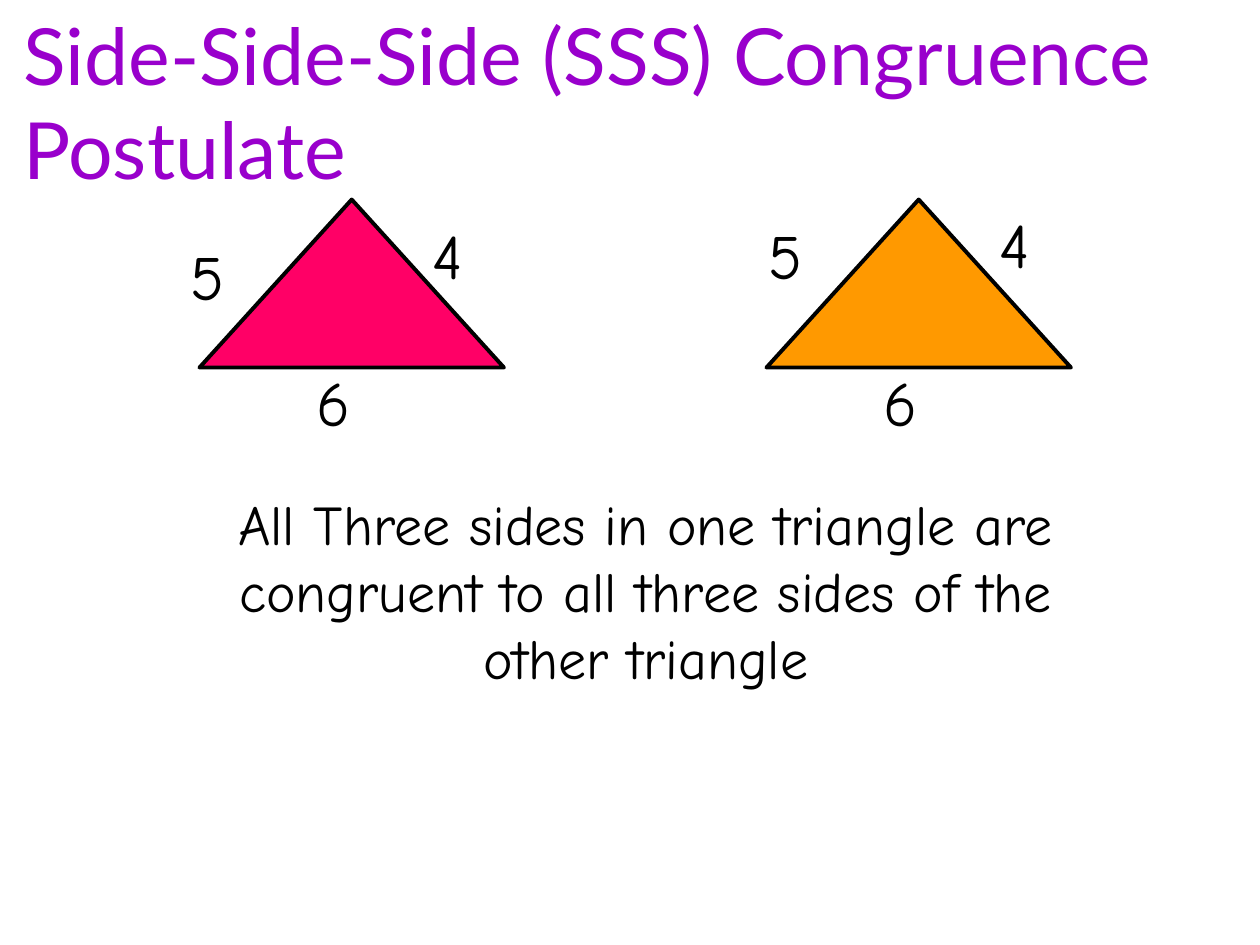
from dataclasses import dataclass

import pptx
import pptx.dml.color
import pptx.enum.shapes
import pptx.enum.text
import pptx.util

Pt = pptx.util.Pt
ALIGN = pptx.enum.text.PP_ALIGN
COLORS = {"title": "9900CC", "pink": "FF0066", "orange": "FF9900", "ink": "000000"}
TITLE_FONT = {"name": "Lato", "size": Pt(45)}
LABEL_FONT = {"name": "Comic Neue", "size": Pt(36)}
STATEMENT_FONT = {"name": "Comic Neue", "size": Pt(32)}
FRAME = {
    "word_wrap": True,
    "auto_size": pptx.enum.text.MSO_AUTO_SIZE.SHAPE_TO_FIT_TEXT,
    "vertical_anchor": pptx.enum.text.MSO_ANCHOR.TOP,
}


@dataclass
class Box:
    left: float
    top: float
    width: float
    height: float

    def lengths(self) -> list:
        return [Pt(v) for v in (self.left, self.top, self.width, self.height)]


@dataclass
class SideLabel:
    text: str
    left: float
    top: float


@dataclass
class Triangle:
    left: float
    color: str
    labels: list[SideLabel]


TRIANGLE_TOP, TRIANGLE_WIDTH, TRIANGLE_HEIGHT = 114, 174, 96
LABEL_WIDTH, LABEL_HEIGHT = 48, 50.4
TRIANGLES = [
    Triangle(114, "pink", [
        SideLabel("5", 102, 132), SideLabel("4", 240, 120), SideLabel("6", 174, 204)]),
    Triangle(438, "orange", [
        SideLabel("5", 432, 120), SideLabel("4", 564, 114), SideLabel("6", 498, 204)]),
]


def rgb(name: str) -> pptx.dml.color.RGBColor:
    return pptx.dml.color.RGBColor.from_string(COLORS[name])


def set_all(target, values: dict) -> None:
    for name, value in values.items():
        setattr(target, name, value)


def write(sp, text: str, font: dict, color: str, align=ALIGN.LEFT) -> None:
    tf = sp.text_frame
    set_all(tf, FRAME)
    p = tf.paragraphs[0]
    p.alignment = align
    r = p.add_run()
    r.text = text
    set_all(r.font, font)
    r.font.color.rgb = rgb(color)


def draw_title(s, text: str, box: Box) -> None:
    sp = s.shapes.title
    sp.left, sp.top, sp.width, sp.height = box.lengths()
    write(sp, text, TITLE_FONT, "title")


def draw_text(s, text: str, box: Box, font: dict, align=ALIGN.LEFT) -> None:
    sp = s.shapes.add_textbox(*box.lengths())
    write(sp, text, font, "ink", align)


def draw_triangle(s, triangle: Triangle) -> None:
    box = Box(triangle.left, TRIANGLE_TOP, TRIANGLE_WIDTH, TRIANGLE_HEIGHT)
    sp = s.shapes.add_shape(
        pptx.enum.shapes.MSO_SHAPE.ISOSCELES_TRIANGLE, *box.lengths())
    sp.shadow.inherit = False
    sp.fill.solid()
    sp.fill.fore_color.rgb = rgb(triangle.color)
    sp.line.color.rgb = rgb("ink")
    sp.line.width = Pt(2.25)
    for label in triangle.labels:
        draw_text(s, label.text,
                  Box(label.left, label.top, LABEL_WIDTH, LABEL_HEIGHT), LABEL_FONT)


def main() -> None:
    prs = pptx.Presentation()
    prs.slide_width, prs.slide_height = Pt(720), Pt(540)
    s = prs.slides.add_slide(prs.slide_layouts.get_by_name("Title Only"))
    draw_title(s, "Side-Side-Side (SSS) Congruence Postulate", Box(6, 0, 708, 115.2))
    for triangle in TRIANGLES:
        draw_triangle(s, triangle)
    draw_text(
        s,
        "All Three sides in one triangle are congruent to all three sides "
        "of the other triangle",
        Box(96, 276, 546, 124), STATEMENT_FONT, ALIGN.CENTER)
    prs.save("out.pptx")


if __name__ == "__main__":
    main()
